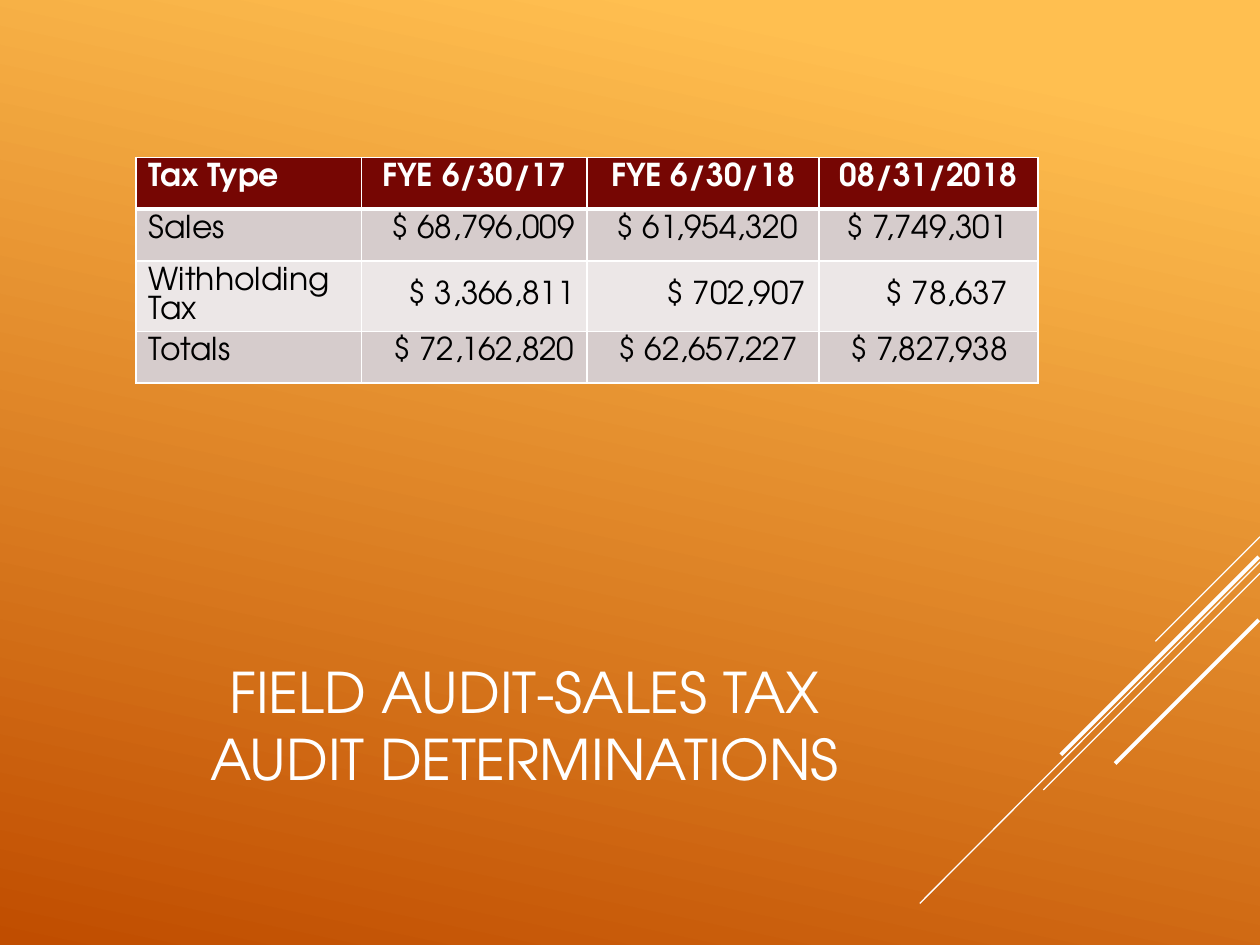
import pptx
import pptx.util
import pptx.dml.color
import pptx.enum.shapes
import pptx.enum.text
from dataclasses import dataclass
from lxml import etree
from pptx.oxml.ns import qn
from pptx.util import Inches, Pt

ALIGN = pptx.enum.text.PP_ALIGN
ANCHOR = pptx.enum.text.MSO_ANCHOR


@dataclass(frozen=True)
class Theme:
    font: str = "TeX Gyre Adventor"
    title_size: float = 32
    title_leading: float = 38.3
    cell_size: float = 18
    cell_leading: float = 16.6
    white: str = "FFFFFF"
    black: str = "000000"
    header: str = "760603"
    band_dark: str = "D6CCCC"
    band_light: str = "ECE7E7"
    bg_light: str = "FFBF50"
    bg_dark: str = "C04D00"


THEME = Theme()

HEADINGS = ["Tax Type", "FYE 6/30/17", "FYE 6/30/18", "08/31/2018"]
AMOUNTS = [
    ["Sales", "$ 68,796,009", "$ 61,954,320", "$ 7,749,301"],
    ["Withholding Tax", "$ 3,366,811", "$ 702,907", "$ 78,637"],
    ["Totals", "$ 72,162,820", "$ 62,657,227", "$ 7,827,938"],
]
COL_WIDTHS = [1.79, 1.79, 1.84, 1.74]
ROW_HEIGHTS = [0.41, 0.41, 0.56, 0.41]
RIGHT_MARGINS = [0.1, 0.1, 0.17, 0.24]

# Diagonal accent lines: start, end, weight
ACCENTS = [
    ((10, 4.26), (9.17, 5.09), 0.75),
    ((10, 4.46), (7.3, 7.17), 0.75),
    ((10, 4.55), (8.28, 6.27), 0.75),
    ((9.99, 4.42), (8.42, 5.99), 2.25),
    ((9.99, 4.92), (8.85, 6.06), 2.25),
]


def rgb(value):
    return pptx.dml.color.RGBColor.from_string(value)


def write_text(tf, text, size, leading, color, bold=False, align=ALIGN.LEFT):
    """Write one paragraph; a newline becomes a line break."""
    p = tf.paragraphs[0]
    p.alignment = align
    p.line_spacing = Pt(leading)
    for i, line in enumerate(text.split("\n")):
        if i:
            p.add_line_break()
        r = p.add_run()
        r.text = line
        r.font.name = THEME.font
        r.font.size = Pt(size)
        r.font.bold = bold
        r.font.color.rgb = rgb(color)


def set_background(s):
    fill = s.background.fill
    fill.gradient()
    fill.gradient_angle = 360 - 102
    stops = [(0.1, THEME.bg_light), (1, THEME.bg_dark)]
    for stop, (position, color) in zip(fill.gradient_stops, stops):
        stop.position = position
        stop.color.rgb = rgb(color)


def add_accent(s, start, end, weight):
    points = [Inches(v) for v in (*start, *end)]
    line = s.shapes.add_connector(
        pptx.enum.shapes.MSO_CONNECTOR.STRAIGHT, *points)
    line.line.color.rgb = rgb(THEME.white)
    line.line.width = Pt(weight)
    etree.SubElement(line._element.spPr, qn("a:effectLst"))


def add_title(s, text):
    sp = s.shapes.title
    sp.left, sp.top = Inches(0.58), Inches(4.92)
    sp.width, sp.height = Inches(7.17), Inches(1.67)
    tf = sp.text_frame
    tf.word_wrap = True
    tf.auto_size = pptx.enum.text.MSO_AUTO_SIZE.NONE
    tf.vertical_anchor = ANCHOR.MIDDLE
    write_text(tf, text, THEME.title_size, THEME.title_leading, THEME.white,
               align=ALIGN.CENTER)


def set_borders(cell, top=1, bottom=1):
    tcPr = cell._tc.get_or_add_tcPr()
    for side, weight in (("L", 1), ("R", 1), ("T", top), ("B", bottom)):
        ln = etree.SubElement(tcPr, qn(f"a:ln{side}"), w=str(Pt(weight)))
        fill = etree.SubElement(ln, qn("a:solidFill"))
        etree.SubElement(fill, qn("a:srgbClr"), val=THEME.white)


def format_cell(cell, text, row, col):
    header = row == 0
    set_borders(cell, top=3 if row == 1 else 1, bottom=3 if header else 1)
    band = THEME.band_dark if row % 2 else THEME.band_light
    cell.fill.solid()
    cell.fill.fore_color.rgb = rgb(THEME.header if header else band)
    cell.margin_left = cell.margin_right = Inches(0.1)
    cell.margin_top = cell.margin_bottom = Inches(0.05)
    align = ALIGN.LEFT
    if col:
        align = ALIGN.CENTER if header else ALIGN.RIGHT
        # Amounts sit on one line beside the two-line label
        if row == 2:
            cell.vertical_anchor = ANCHOR.MIDDLE
        if not header and (row, col) != (2, 2):
            cell.margin_right = Inches(RIGHT_MARGINS[col])
    write_text(cell.text_frame, text, THEME.cell_size, THEME.cell_leading,
               THEME.white if header else THEME.black, bold=header,
               align=align)


def add_tax_table(s):
    rows = [HEADINGS] + AMOUNTS
    table = s.shapes.add_table(
        len(rows), len(HEADINGS), Inches(1.08), Inches(1.25),
        Inches(sum(COL_WIDTHS)), Inches(sum(ROW_HEIGHTS))).table
    for column, width in zip(table.columns, COL_WIDTHS):
        column.width = Inches(width)
    for i, values in enumerate(rows):
        table.rows[i].height = Inches(ROW_HEIGHTS[i])
        for j, text in enumerate(values):
            format_cell(table.cell(i, j), text, i, j)


def main():
    prs = pptx.Presentation()
    prs.slide_width, prs.slide_height = Inches(10), Inches(7.5)
    s = prs.slides.add_slide(prs.slide_layouts[5])

    # Backdrop
    set_background(s)
    for start, end, weight in ACCENTS:
        add_accent(s, start, end, weight)

    # Content
    add_title(s, "FIELD AUDIT-SALES TAX\nAUDIT DETERMINATIONS")
    add_tax_table(s)
    prs.save("out.pptx")


if __name__ == "__main__":
    main()
